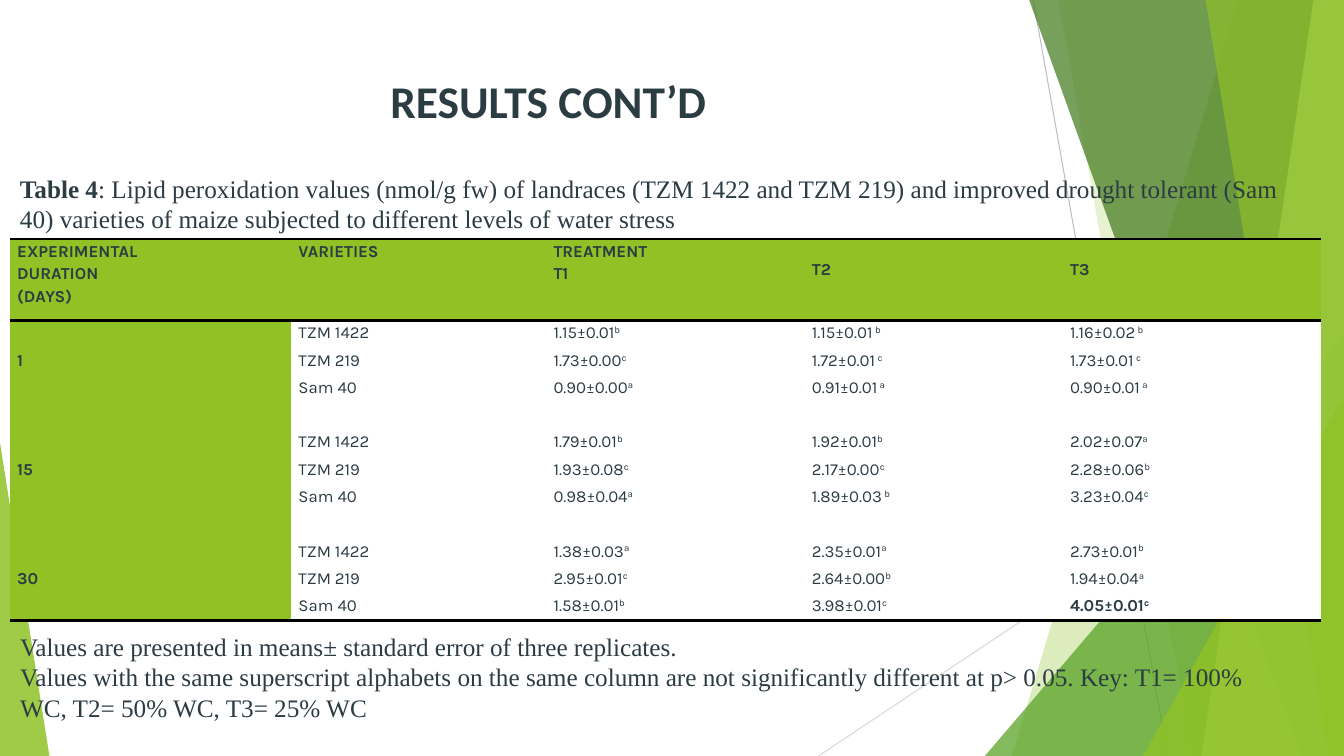
from dataclasses import dataclass

from lxml.etree import SubElement
from pptx import Presentation
from pptx.dml.color import RGBColor
from pptx.enum.shapes import MSO_CONNECTOR, MSO_SHAPE
from pptx.enum.text import MSO_ANCHOR, PP_ALIGN
from pptx.oxml.ns import qn
from pptx.util import Inches, Pt

SLIDE_WIDTH, SLIDE_HEIGHT = Inches(13.333), Inches(7.5)

INK = RGBColor(0x2C, 0x3C, 0x43)
LIME = RGBColor(0x90, 0xC2, 0x26)
LEAF = RGBColor(0x54, 0xA0, 0x21)
FOREST = RGBColor(0x3F, 0x78, 0x19)
PALE_LIME = RGBColor(0xC0, 0xE4, 0x74)
WHITE = RGBColor(0xFF, 0xFF, 0xFF)
GREY = RGBColor(0xBF, 0xBF, 0xBF)
LIGHT_GREY = RGBColor(0xD9, 0xD9, 0xD9)

NO_GRID_STYLE = "{2D5ABB26-0587-4C30-8999-92F81FD0307C}"
COLUMN_SHARES = (20.93, 18.98, 19.22, 19.22, 19.22)
HEADER_SHARE, ROW_SHARE = 10.8, 3.61

HEADINGS = ("EXPERIMENTAL\nDURATION\n(DAYS)", "VARIETIES", "TREATMENT\nT1", "T2", "T3")
VARIETIES = ("TZM 1422", "TZM 219", "Sam 40")
HIGHEST = "4.05±0.01^c"


@dataclass(frozen=True)
class Ray:
    start: tuple[float, float]
    end: tuple[float, float]
    color: RGBColor


@dataclass(frozen=True)
class Band:
    top_x: float
    bottom_x: float
    color: RGBColor
    opacity: int


@dataclass(frozen=True)
class Corner:
    left: float
    top: float
    width: float
    apex: float
    color: RGBColor
    opacity: int


@dataclass(frozen=True)
class Trial:
    days: str
    values: tuple[tuple[str, str, str], ...]


@dataclass(frozen=True)
class Segment:
    text: str
    bold: bool = False
    raised: bool = False


RAYS = (
    Ray((76.88, 0), (86.88, 100), GREY),
    Ray((100, 53.73), (60.9, 100), LIGHT_GREY),
)
FACETS = (
    Band(92.1, 75.3, LIME, 30),
    Band(78.75, 88.73, LIME, 20),
    Corner(73.28, 44.4, 26.72, 1, LEAF, 72),
    Band(76.58, 96.83, FOREST, 70),
    Band(97.73, 89.4, PALE_LIME, 70),
    Band(89.7, 98.85, LIME, 65),
    Corner(85.05, 52.4, 14.95, 1, LIME, 80),
    Corner(0, 58.53, 3.68, 0, LIME, 85),
)
TRIALS = (
    Trial("1", (("1.15±0.01^b", "1.15±0.01^ b", "1.16±0.02^ b"),
                ("1.73±0.00^c", "1.72±0.01^ c", "1.73±0.01^ c"),
                ("0.90±0.00^a", "0.91±0.01^ a", "0.90±0.01^ a"))),
    Trial("15", (("1.79±0.01^b", "1.92±0.01^b", "2.02±0.07^a"),
                 ("1.93±0.08^c", "2.17±0.00^c", "2.28±0.06^b"),
                 ("0.98±0.04^a", "1.89±0.03^ b", "3.23±0.04^c"))),
    Trial("30", (("1.38±0.03^a", "2.35±0.01^a", "2.73±0.01^b"),
                 ("2.95±0.01^c", "2.64±0.00^b", "1.94±0.04^a"),
                 ("1.58±0.01^b", "3.98±0.01^c", HIGHEST))),
)


def across(percent: float) -> int:
    return round(SLIDE_WIDTH * percent / 100)


def down(percent: float) -> int:
    return round(SLIDE_HEIGHT * percent / 100)


def write(frame, *segments: Segment, font: str, size: float,
          align=PP_ALIGN.LEFT, spacing: float = 1.0) -> None:
    first = frame.paragraphs[0]
    paragraph = frame.add_paragraph() if first.runs else first
    paragraph.alignment, paragraph.line_spacing = align, spacing
    for segment in segments:
        run = paragraph.add_run()
        run.text = segment.text
        run.font.name, run.font.size, run.font.bold = font, Pt(size), segment.bold
        run.font.color.rgb = INK
        if segment.raised:
            run.font._rPr.set("baseline", "30000")
    if not segments:
        SubElement(paragraph._p, qn("a:endParaRPr"), sz=str(round(size * 100)))


def add_frame(slide, left: float, top: float, width: float, height: float, anchor=MSO_ANCHOR.TOP):
    frame = slide.shapes.add_textbox(across(left), down(top), across(width), down(height)).text_frame
    frame.word_wrap, frame.vertical_anchor = True, anchor
    return frame


def draw_ray(slide, ray: Ray) -> None:
    connector = slide.shapes.add_connector(
        MSO_CONNECTOR.STRAIGHT, across(ray.start[0]), down(ray.start[1]),
        across(ray.end[0]), down(ray.end[1]))
    connector.line.color.rgb, connector.line.width = ray.color, Pt(0.75)
    SubElement(connector._element.spPr, qn("a:effectLst"))


def draw_facet(slide, facet: Band | Corner) -> None:
    if isinstance(facet, Band):
        builder = slide.shapes.build_freeform(across(facet.top_x), 0)
        builder.add_line_segments([(across(100), 0), (across(100), down(100)),
                                   (across(facet.bottom_x), down(100))])
        outline = builder.convert_to_shape()
    else:
        outline = slide.shapes.add_shape(
            MSO_SHAPE.ISOSCELES_TRIANGLE, across(facet.left), down(facet.top),
            across(facet.width), down(100 - facet.top))
        outline.adjustments[0] = facet.apex
    outline.shadow.inherit = False
    outline.line.fill.background()
    outline.fill.solid()
    outline.fill.fore_color.rgb = facet.color
    tint = outline._element.spPr.find(qn("a:solidFill"))[0]
    SubElement(tint, qn("a:alpha"), val=str(facet.opacity * 1000))


def rule_cell(cell, edge: str) -> None:
    line = SubElement(cell._tc.get_or_add_tcPr(), qn(edge), w=str(Pt(2)))
    SubElement(SubElement(line, qn("a:solidFill")), qn("a:srgbClr"), val="000000")


def table_rows() -> list[tuple[str, ...]]:
    rows = [HEADINGS]
    for trial in TRIALS:
        if trial is not TRIALS[0]:
            rows.append(("",) * len(HEADINGS))
        for index, (variety, values) in enumerate(zip(VARIETIES, trial.values)):
            rows.append((trial.days if index == 1 else "", variety, *values))
    return rows


def fill_cell(cell, text: str, is_heading: bool, is_label: bool) -> None:
    cell.margin_left = cell.margin_right = across(0.53)
    cell.margin_top = cell.margin_bottom = 0
    if text in ("T2", "T3"):
        cell.margin_top = down(2.4)
    cell.fill.solid()
    cell.fill.fore_color.rgb = LIME if is_heading or is_label else WHITE
    bold = is_heading or is_label or text == HIGHEST
    for line in text.split("\n"):
        value, _, group = line.partition("^")
        segments = [Segment(value, bold)] if value else []
        if group:
            segments.append(Segment(group, bold, raised=True))
        write(cell.text_frame, *segments, font="Karla", size=12,
              align=PP_ALIGN.JUSTIFY, spacing=1.15)


def draw_table(slide) -> None:
    rows = table_rows()
    heights = [HEADER_SHARE] + [ROW_SHARE] * (len(rows) - 1)
    table = slide.shapes.add_table(
        len(rows), len(HEADINGS), across(0.75), down(31.6),
        across(sum(COLUMN_SHARES)), down(sum(heights))).table
    table.first_row = table.horz_banding = False
    table._tbl.tblPr.find(qn("a:tableStyleId")).text = NO_GRID_STYLE
    for column, share in zip(table.columns, COLUMN_SHARES):
        column.width = across(share)
    for row_index, (texts, height) in enumerate(zip(rows, heights)):
        table.rows[row_index].height = down(height)
        for column_index, text in enumerate(texts):
            cell = table.cell(row_index, column_index)
            if row_index == 0:
                rule_cell(cell, "a:lnT")
            if row_index in (0, len(rows) - 1):
                rule_cell(cell, "a:lnB")
            fill_cell(cell, text, row_index == 0, column_index == 0)


def main() -> None:
    deck = Presentation()
    deck.slide_width, deck.slide_height = SLIDE_WIDTH, SLIDE_HEIGHT
    slide = deck.slides.add_slide(deck.slide_layouts[6])
    for ray in RAYS:
        draw_ray(slide, ray)
    for facet in FACETS:
        draw_facet(slide, facet)
    title = add_frame(slide, 5.55, 8.93, 70.5, 8.8, MSO_ANCHOR.MIDDLE)
    write(title, Segment("RESULTS CONT’D", True), font="Calibri", size=32.4, align=PP_ALIGN.CENTER)
    draw_table(slide)
    caption = add_frame(slide, 0.75, 22.27, 97.58, 9.47)
    write(caption, Segment("Table 4", True),
          Segment(": Lipid peroxidation values (nmol/g fw) of landraces (TZM 1422 and TZM 219) "
                  "and improved drought tolerant (Sam 40) varieties of maize subjected to "
                  "different levels of water stress"),
          font="Times New Roman", size=18)
    notes = add_frame(slide, 0.75, 82.27, 95.03, 14.13)
    write(notes, Segment("Values are presented in means± standard error of three replicates."),
          font="Times New Roman", size=18, align=PP_ALIGN.JUSTIFY, spacing=1.15)
    write(notes, Segment("Values with the same superscript alphabets on the same column are not "
                         "significantly different at p> 0.05. Key: T1= 100% WC, T2= 50% WC, T3= 25% WC"),
          font="Times New Roman", size=18)
    deck.save("out.pptx")


if __name__ == "__main__":
    main()
